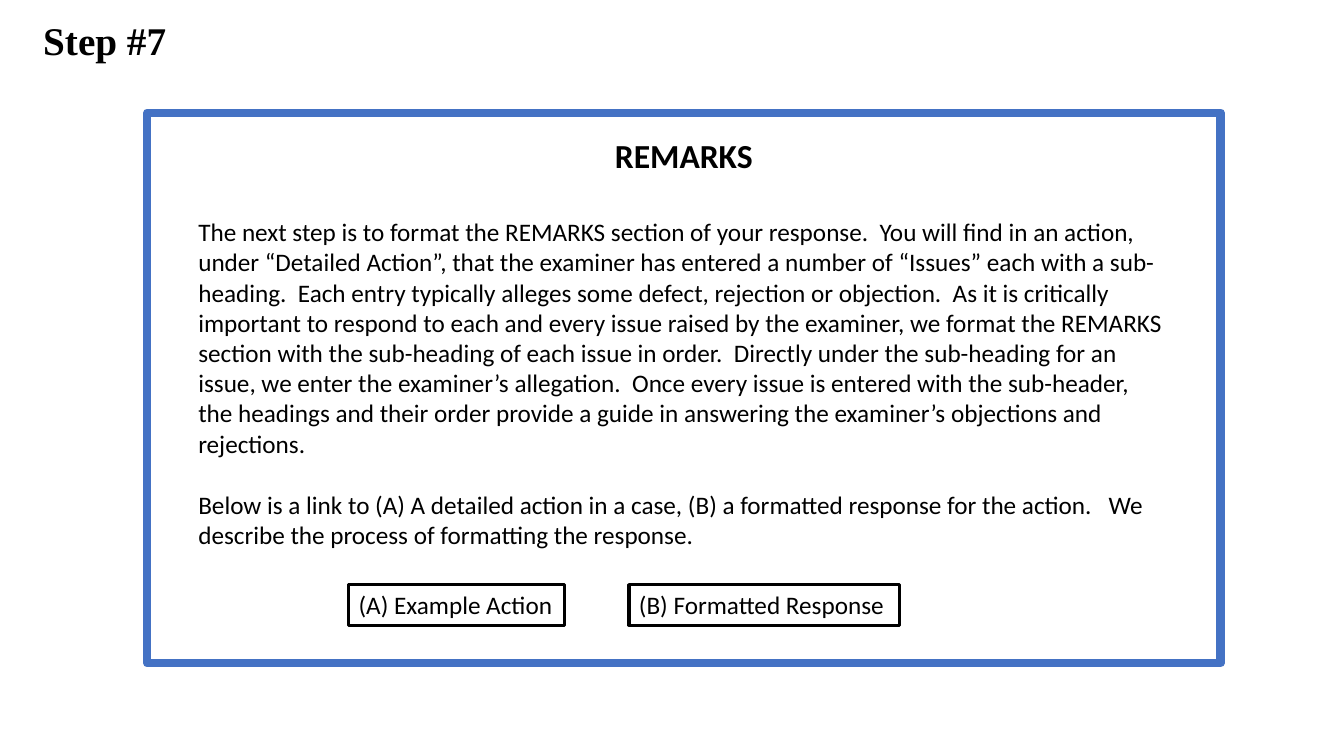
from pptx import Presentation
from pptx.dml.color import RGBColor
from pptx.enum.shapes import MSO_SHAPE
from pptx.enum.text import MSO_ANCHOR, PP_ALIGN
from pptx.util import Pt

RECT = MSO_SHAPE.RECTANGLE
TOP = MSO_ANCHOR.TOP
LEFT, CENTER = PP_ALIGN.LEFT, PP_ALIGN.CENTER

# Content
STEP = "Step #7"
HEADING = "REMARKS"
BODY = [
    "The next step is to format the REMARKS section of your response.  You will find in an "
    "action, under “Detailed Action”, that the examiner has entered a number of “Issues” each "
    "with a sub-heading.  Each entry typically alleges some defect, rejection or objection.  "
    "As it is critically important to respond to each and every issue raised by the examiner, "
    "we format the REMARKS section with the sub-heading of each issue in order.  Directly "
    "under the sub-heading for an issue, we enter the examiner’s allegation.  Once every issue "
    "is entered with the sub-header, the headings and their order provide a guide in answering "
    "the examiner’s objections and rejections.",
    "Below is a link to (A) A detailed action in a case, (B) a formatted response for the "
    "action.   We describe the process of formatting the response.",
]
# Label, left, width
BUTTONS = [
    ("(A) Example Action", 249.1, 154.1),
    ("(B) Formatted Response", 449.3, 193),
]
BUTTON_TOP, BUTTON_HEIGHT = 417.6, 29

THEME = {
    "ink": RGBColor(0, 0, 0),
    "frame": RGBColor(0x44, 0x72, 0xC4),
    "title_font": "Times New Roman",
    "body_font": "Calibri",
    "title": 28,
    "heading": 24,
    "body": 18,
}


def add_text(tf, text, size=THEME["body"], font=THEME["body_font"], bold=False,
             align=LEFT, after=0, first=True):
    p = tf.paragraphs[0] if first else tf.add_paragraph()
    p.alignment = align
    p.space_after = Pt(after)
    r = p.add_run()
    r.text = text
    r.font.name, r.font.size, r.font.bold = font, Pt(size), bold
    r.font.color.rgb = THEME["ink"]


def add_box(left, top, width, height):
    tf = s.shapes.add_textbox(Pt(left), Pt(top), Pt(width), Pt(height)).text_frame
    tf.word_wrap = True
    return tf


def add_outline(left, top, width, height, color, weight):
    sp = s.shapes.add_shape(RECT, Pt(left), Pt(top), Pt(width), Pt(height))
    sp.shadow.inherit = False
    sp.fill.background()
    sp.line.color.rgb = color
    sp.line.width = Pt(weight)
    return sp


prs = Presentation()
prs.slide_width, prs.slide_height = Pt(960), Pt(540)
s = prs.slides.add_slide(prs.slide_layouts[6])

# Frame
add_outline(105.1, 80.6, 766.8, 393.1, THEME["frame"], 6)

# Remarks: one empty line's height separates the paragraphs
tf = add_box(134.6, 92.9, 707.8, 414.7)
add_text(tf, HEADING, size=THEME["heading"], bold=True, align=CENTER, after=29.3)
for text in BODY:
    add_text(tf, text, after=22, first=False)

# Step title
add_text(add_box(23.8, 7.9, 480.2, 41), STEP, size=THEME["title"],
         font=THEME["title_font"], bold=True)

# Labelled buttons
for label, left, width in BUTTONS:
    sp = add_outline(left, BUTTON_TOP, width, BUTTON_HEIGHT, THEME["ink"], 2.25)
    tf = sp.text_frame
    tf.word_wrap = True
    tf.vertical_anchor = TOP
    tf.margin_right = 0
    add_text(tf, label)

prs.save("out.pptx")
